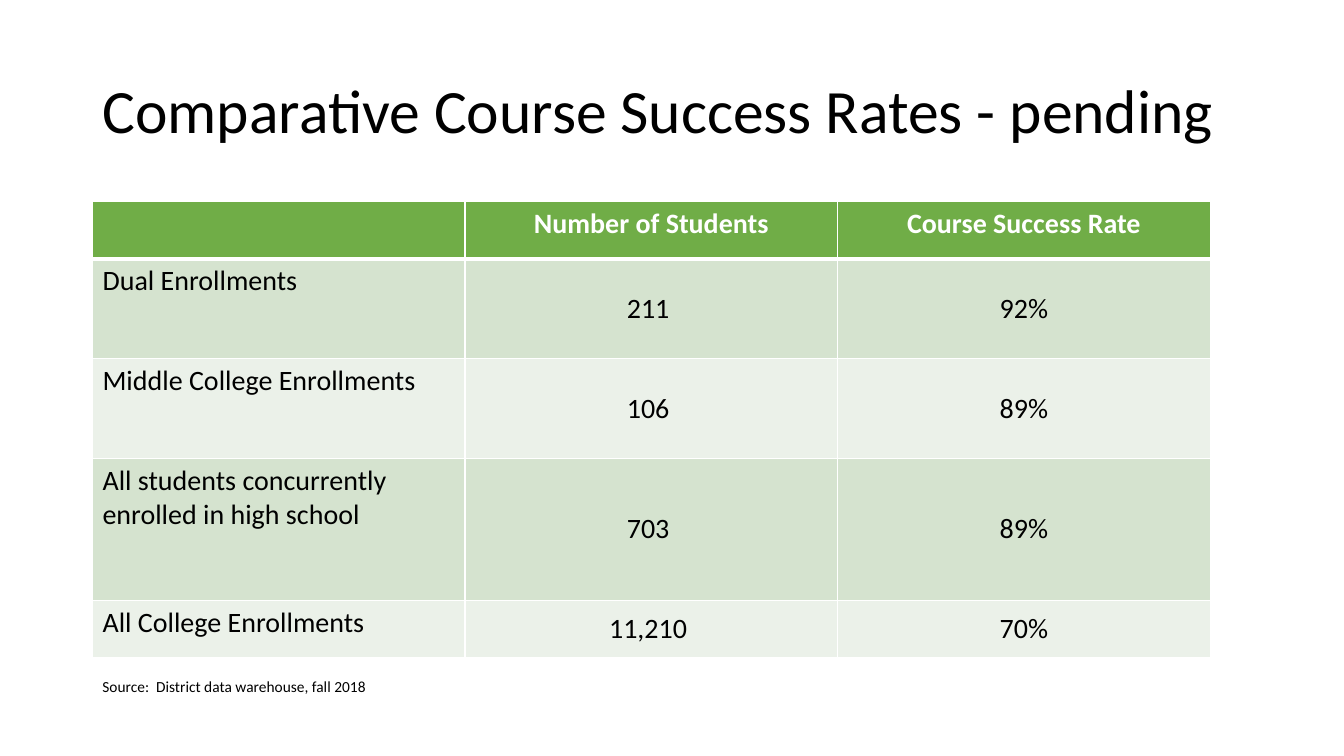
import pptx
import pptx.dml.color
import pptx.enum.text
import pptx.oxml.ns
import pptx.util
from lxml import etree

Cm = pptx.util.Cm
Pt = pptx.util.Pt
RGBColor = pptx.dml.color.RGBColor
ALIGN = pptx.enum.text.PP_ALIGN
ANCHOR = pptx.enum.text.MSO_ANCHOR

BLACK = RGBColor(0x00, 0x00, 0x00)
WHITE = RGBColor(0xFF, 0xFF, 0xFF)
HEADER_GREEN = RGBColor(0x70, 0xAD, 0x47)
BAND_COLORS = (RGBColor(0xD5, 0xE3, 0xCF), RGBColor(0xEB, 0xF1, 0xE9))
FONT = "Calibri"
TABLE_ROWS = [
    ("", "Number of Students", "Course Success Rate"),
    ("Dual Enrollments", "211 ", "92%"),
    ("Middle College Enrollments", "106 ", "89%"),
    ("All students concurrently enrolled in high school", "703 ", "89%"),
    ("All College Enrollments", "11,210 ", "70%"),
]
ROW_HEIGHTS = (1.45, 2.51, 2.51, 3.58, 1.45)


def add_span(para, text, size, color=BLACK, bold=False):
    span = para.add_run()
    span.text = text
    span.font.name = FONT
    span.font.size = Pt(size)
    span.font.bold = bold
    span.font.color.rgb = color


def set_border(cell, side, width):
    properties = cell._tc.get_or_add_tcPr()
    line = etree.SubElement(properties, pptx.oxml.ns.qn("a:ln" + side), w=str(Pt(width)))
    fill = etree.SubElement(line, pptx.oxml.ns.qn("a:solidFill"))
    etree.SubElement(fill, pptx.oxml.ns.qn("a:srgbClr"), val=str(WHITE))


def place_title(page, left, top, width, height):
    title = page.shapes.title
    title.left, title.top, title.width, title.height = left, top, width, height
    frame = title.text_frame
    frame.word_wrap = True
    frame.auto_size = pptx.enum.text.MSO_AUTO_SIZE.NONE
    frame.vertical_anchor = ANCHOR.MIDDLE
    para = frame.paragraphs[0]
    para.alignment = ALIGN.LEFT
    para.line_spacing = 0.9
    add_span(para, "Comparative Course Success Rates - pending", 44)


def fill_cell(cell, text, row, column):
    # Thick rule between the header and the body
    set_border(cell, "L", 1)
    set_border(cell, "R", 1)
    set_border(cell, "T", 3 if row == 1 else 1)
    set_border(cell, "B", 3 if row == 0 else 1)
    header = row == 0
    cell.fill.solid()
    cell.fill.fore_color.rgb = HEADER_GREEN if header else BAND_COLORS[(row - 1) % 2]
    cell.vertical_anchor = ANCHOR.TOP if header or column == 0 else ANCHOR.MIDDLE
    para = cell.text_frame.paragraphs[0]
    para.alignment = ALIGN.LEFT if column == 0 else ALIGN.CENTER
    if text:
        add_span(para, text, 20, WHITE if header else BLACK, header)


def place_rates_table(page, left, top, width, height):
    row_count, column_count = len(TABLE_ROWS), len(TABLE_ROWS[0])
    table = page.shapes.add_table(row_count, column_count, left, top, width, height).table
    for column in table.columns:
        column.width = width // column_count
    for row, texts in enumerate(TABLE_ROWS):
        table.rows[row].height = Cm(ROW_HEIGHTS[row])
        for column, text in enumerate(texts):
            fill_cell(table.cell(row, column), text, row, column)


def place_source_note(page, left, top, width, height):
    box = page.shapes.add_textbox(left, top, width, height)
    box.text_frame.word_wrap = False
    box.text_frame.auto_size = pptx.enum.text.MSO_AUTO_SIZE.SHAPE_TO_FIT_TEXT
    add_span(box.text_frame.paragraphs[0], "Source:  District data warehouse, fall 2018", 11)


def main():
    deck = pptx.Presentation()
    deck.slide_width, deck.slide_height = Cm(33.87), Cm(19.05)
    page = deck.slides.add_slide(deck.slide_layouts[5])
    left = Cm(2.33)
    place_title(page, left, Cm(1.01), Cm(29.21), Cm(3.68))
    place_rates_table(page, left, Cm(5.08), Cm(28.17), Cm(sum(ROW_HEIGHTS)))
    place_source_note(page, left, Cm(16.94), Cm(7.26), Cm(0.73))
    deck.save("out.pptx")


if __name__ == "__main__":
    main()
